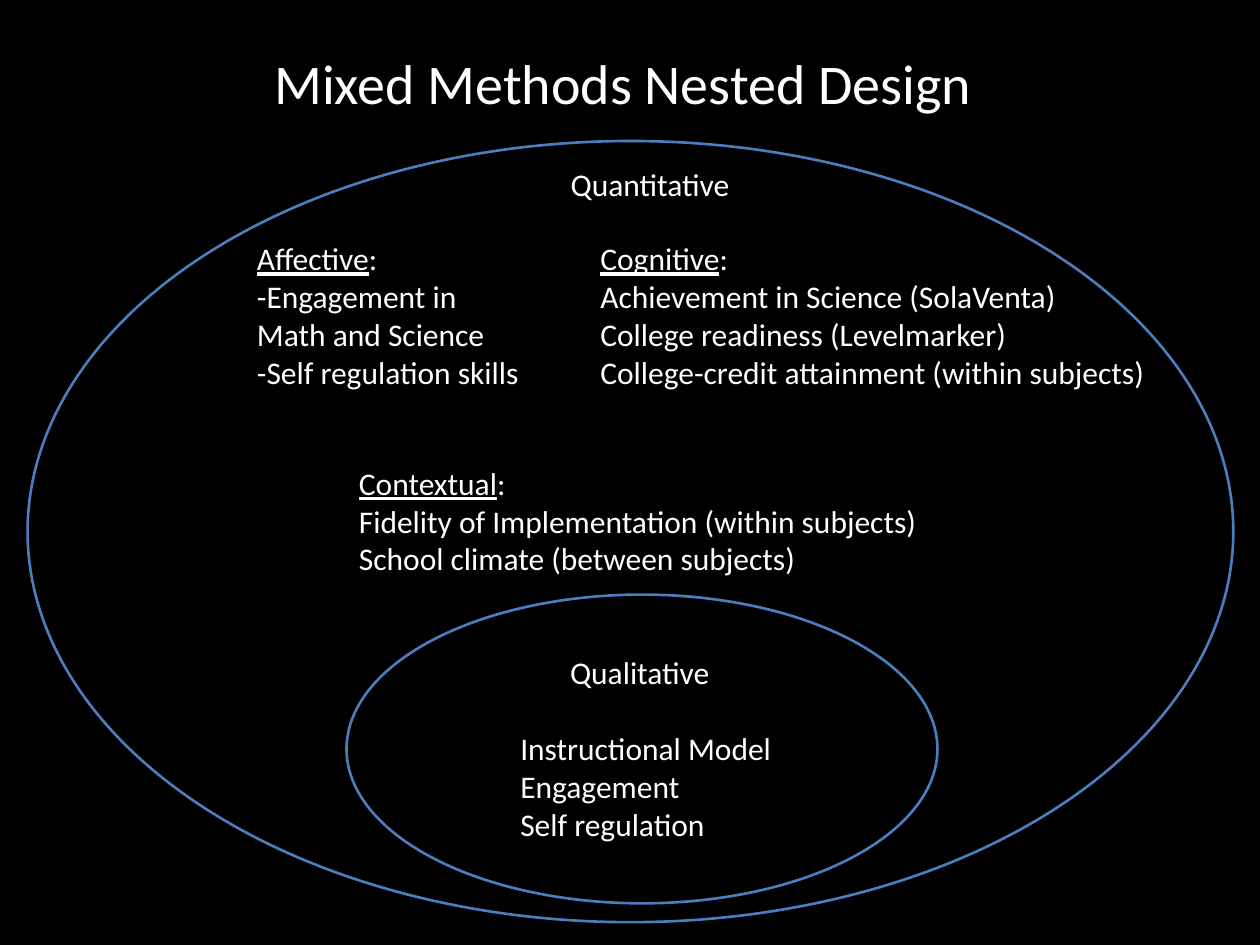
from pptx import Presentation
from pptx.dml.color import RGBColor
from pptx.enum.shapes import MSO_SHAPE
from pptx.enum.text import MSO_ANCHOR, MSO_AUTO_SIZE, PP_ALIGN
from pptx.util import Pt

BLACK = RGBColor(0x00, 0x00, 0x00)
WHITE = RGBColor(0xFF, 0xFF, 0xFF)
BLUE = RGBColor(0x4B, 0x7E, 0xBC)
OVAL = MSO_SHAPE.OVAL
MIDDLE = MSO_ANCHOR.MIDDLE
CENTER = PP_ALIGN.CENTER
FIT_SHAPE = MSO_AUTO_SIZE.SHAPE_TO_FIT_TEXT
TITLE_ONLY = 5


class NestedDesignSlide:
    font = "Calibri"
    title_size = 32
    body_size = 18
    line_height = 22

    def __init__(self, prs):
        self.s = prs.slides.add_slide(prs.slide_layouts[TITLE_ONLY])
        fill = self.s.background.fill
        fill.solid()
        fill.fore_color.rgb = BLACK

    def set_font(self, p, size):
        p.font.name = self.font
        p.font.size = Pt(size)
        p.font.color.rgb = WHITE

    def title(self, text, x, y, w, h):
        sp = self.s.shapes.title
        sp.left, sp.top, sp.width, sp.height = Pt(x), Pt(y), Pt(w), Pt(h)
        tf = sp.text_frame
        tf.text = text
        tf.vertical_anchor = MIDDLE
        p = tf.paragraphs[0]
        p.alignment = CENTER
        self.set_font(p, self.title_size)

    def ellipse(self, x, y, w, h):
        sp = self.s.shapes.add_shape(OVAL, Pt(x), Pt(y), Pt(w), Pt(h))
        sp.shadow.inherit = False
        sp.fill.background()
        sp.line.color.rgb = BLUE
        sp.line.width = Pt(1.5)

    def text(self, lines, x, y, w, heading=None):
        """Add a text box, with an underlined heading when one is given."""
        count = len(lines) + (heading is not None)
        height = count * self.line_height + 7.2
        sp = self.s.shapes.add_textbox(Pt(x), Pt(y), Pt(w), Pt(height))
        tf = sp.text_frame
        tf.word_wrap = False
        tf.auto_size = FIT_SHAPE
        tf.text = "\n".join(lines if heading is None else ["", *lines])
        if heading is not None:
            p = tf.paragraphs[0]
            r = p.add_run()
            r.text = heading
            r.font.underline = True
            p.add_run().text = ":"
        for p in tf.paragraphs:
            self.set_font(p, self.body_size)


def main():
    prs = Presentation()
    prs.slide_width, prs.slide_height = Pt(720), Pt(540)
    slide = NestedDesignSlide(prs)
    slide.title("Mixed Methods Nested Design", 32, 21.6, 648, 50.4)

    # Outer and inner ellipses
    slide.ellipse(15.8, 80.6, 689, 446.4)
    slide.ellipse(198, 339.8, 337.7, 176.4)

    # Quantitative strand
    slide.text(["Quantitative"], 319, 90.7, 106.6)
    slide.text(["Achievement in Science (SolaVenta)",
                "College readiness (Levelmarker)",
                "College-credit attainment (within subjects)"],
               336, 133.2, 329.8, "Cognitive")
    slide.text(["-Engagement in", "Math and Science", "-Self regulation skills"],
               139.7, 133.2, 166.3, "Affective")
    slide.text(["Fidelity of Implementation (within subjects)",
                "School climate (between subjects)"],
               198, 261.5, 337, "Contextual")

    # Qualitative strand
    slide.text(["Qualitative"], 318.7, 369.4, 94)
    slide.text(["Instructional Model", "Engagement", "Self regulation"],
               290.2, 413, 159.8)

    prs.save("out.pptx")


if __name__ == "__main__":
    main()
